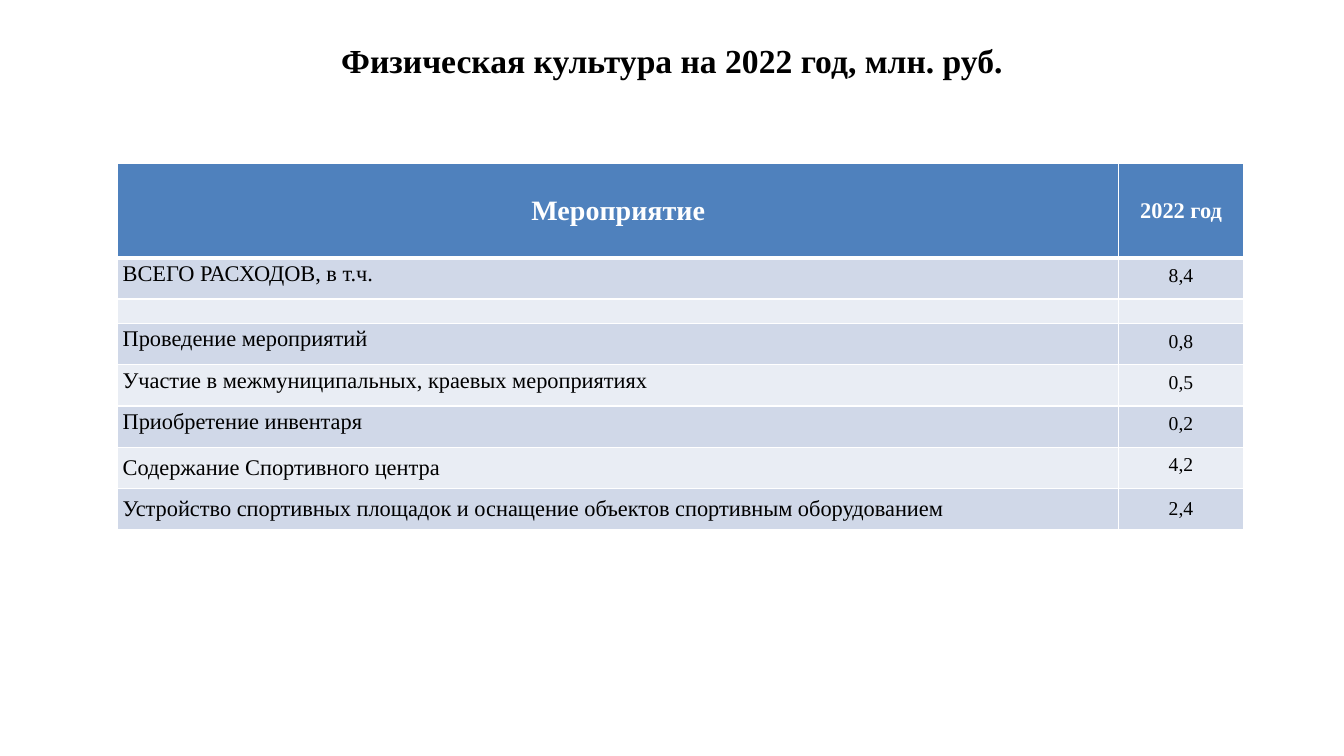
import pptx
import pptx.dml.color
import pptx.enum.text
import pptx.oxml
import pptx.oxml.ns
import pptx.util

ALIGN = pptx.enum.text.PP_ALIGN
MIDDLE = pptx.enum.text.MSO_ANCHOR.MIDDLE

# Label, value, exact line spacing of the label and of the value in points
EXPENSES = [
    ("ВСЕГО РАСХОДОВ, в т.ч.", "8,4", 11, 12),
    ("", "", None, None),
    ("Проведение мероприятий", "0,8", 11, 12),
    ("Участие в межмуниципальных, краевых мероприятиях", "0,5", 11, 12),
    ("Приобретение инвентаря", "0,2", 11, 12),
    ("Содержание Спортивного центра", "4,2", None, 12),
    ("Устройство спортивных площадок и оснащение объектов спортивным оборудованием",
     "2,4", None, None),
]


def color(value):
    return pptx.dml.color.RGBColor.from_string(value)


class BudgetSlide:
    """Slide with a shared style; lengths are percent of its width and height."""

    font_name = "Times New Roman"
    ink, white = "000000", "FFFFFF"
    header_fill, bands = "4F81BD", ("D0D8E8", "E9EDF4")

    def __init__(self, presentation):
        self.column = presentation.slide_width / 100
        self.row = presentation.slide_height / 100
        self.slide = presentation.slides.add_slide(presentation.slide_layouts[6])

    def area(self, left, top, width, height):
        return (round(left * self.column), round(top * self.row),
                round(width * self.column), round(height * self.row))

    def set_text(self, frame, text, size, ink, bold=False, align=ALIGN.CENTER, spacing=None):
        paragraph = frame.paragraphs[0]
        paragraph.text = text
        paragraph.alignment = align
        if spacing:
            paragraph.line_spacing = pptx.util.Pt(spacing)
        paragraph.font.name = self.font_name
        paragraph.font.size = pptx.util.Pt(size)
        paragraph.font.bold = bold
        paragraph.font.color.rgb = color(ink)

    def title(self, text, area):
        frame = self.slide.shapes.add_textbox(*self.area(*area)).text_frame
        frame.word_wrap = True
        frame.vertical_anchor = MIDDLE
        self.set_text(frame, text, 24, self.ink, bold=True)

    def table(self, left, top, widths, heights):
        area = self.area(left, top, sum(widths), sum(heights))
        table = self.slide.shapes.add_table(len(heights), len(widths), *area).table
        for column, width in zip(table.columns, widths):
            column.width = round(width * self.column)
        for row, height in zip(table.rows, heights):
            row.height = round(height * self.row)
        return table

    def cell(self, cell, fill, top=1, bottom=1, compact=True):
        """Fill, anchor and border a cell; top and bottom are line widths in points."""
        cell.fill.solid()
        cell.fill.fore_color.rgb = color(fill)
        cell.vertical_anchor = MIDDLE
        if compact:
            cell.margin_left = cell.margin_right = pptx.util.Inches(0.05)
            cell.margin_top = cell.margin_bottom = 0
        properties = cell._tc.get_or_add_tcPr()
        sides = {"L": 1, "R": 1, "T": top, "B": bottom}
        for index, (side, width) in enumerate(sides.items()):
            properties.insert(index, pptx.oxml.parse_xml(
                f'<a:ln{side} {pptx.oxml.ns.nsdecls("a")} w="{pptx.util.Pt(width)}">'
                f'<a:solidFill><a:srgbClr val="{self.white}"/></a:solidFill></a:ln{side}>'))

    def header(self, table, labels):
        for cell, (text, size) in zip(table.rows[0].cells, labels):
            self.cell(cell, self.header_fill, bottom=3, compact=False)
            self.set_text(cell.text_frame, text, size, self.white, bold=True)

    def expenses(self, table, expenses):
        for index, (label, value, label_spacing, value_spacing) in enumerate(expenses):
            label_cell, value_cell = table.rows[index + 1].cells
            for cell in (label_cell, value_cell):
                self.cell(cell, self.bands[index % 2], top=1 if index else 3)
            self.set_text(label_cell.text_frame, label, 16 if label else 8, self.ink,
                          align=ALIGN.LEFT, spacing=label_spacing)
            self.set_text(value_cell.text_frame, value, 14 if value else 8, self.ink,
                          spacing=value_spacing)


def main():
    presentation = pptx.Presentation()
    presentation.slide_width = pptx.util.Inches(13.33)
    presentation.slide_height = pptx.util.Inches(7.5)
    budget = BudgetSlide(presentation)
    budget.title("Физическая культура на 2022 год, млн. руб.", (5, 4, 90, 8))
    heights = [12.5] + [5.45 if label else 3.25 for label, *_ in EXPENSES]
    table = budget.table(8.75, 21.6, [74.5, 9.25], heights)
    budget.header(table, [("Мероприятие", 20), ("2022 год", 16)])
    budget.expenses(table, EXPENSES)
    presentation.save("out.pptx")


if __name__ == "__main__":
    main()
